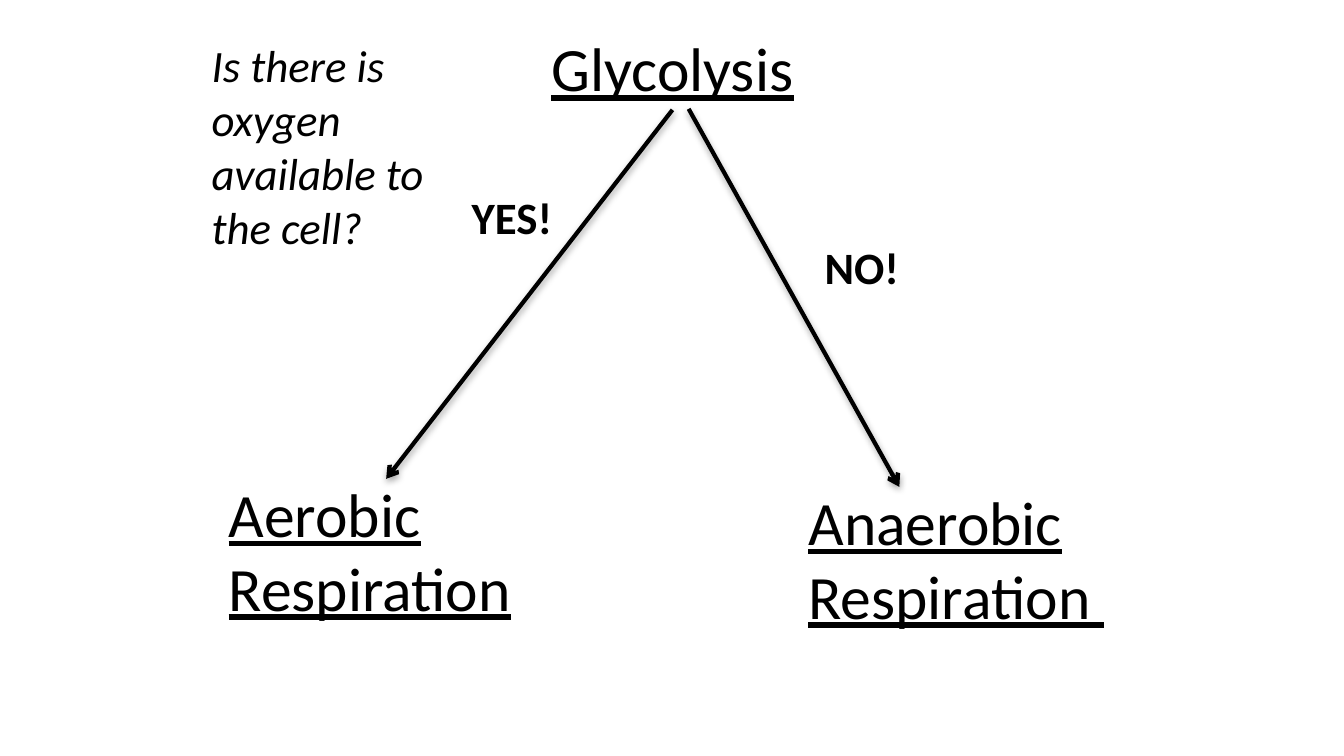
import lxml.etree
import pptx
import pptx.dml.color
import pptx.enum.shapes
import pptx.enum.text
import pptx.oxml.ns
import pptx.util

Inches = pptx.util.Inches
BLACK = "000000"
HEADING = {"size": 44, "underline": True}
QUESTION = {"size": 32, "italic": True}
ANSWER = {"size": 32, "bold": True}


def color(value):
    return pptx.dml.color.RGBColor.from_string(value)


def fill_text(box, text, size, **styles):
    frame = box.text_frame
    frame.word_wrap = True
    frame.auto_size = pptx.enum.text.MSO_AUTO_SIZE.SHAPE_TO_FIT_TEXT
    frame.vertical_anchor = pptx.enum.text.MSO_ANCHOR.TOP
    frame.text = text
    font = frame.paragraphs[0].runs[0].font
    font.name = "Calibri"
    font.size = pptx.util.Pt(size)
    font.color.rgb = color(BLACK)
    for style, value in styles.items():
        setattr(font, style, value)


def add_title(slide, text, left, top, width, height):
    title = slide.shapes.title
    title.left, title.top = Inches(left), Inches(top)
    title.width, title.height = Inches(width), Inches(height)
    fill_text(title, text, **HEADING)
    title.text_frame.paragraphs[0].alignment = pptx.enum.text.PP_ALIGN.CENTER
    return title


def add_label(slide, text, left, top, width, height, style):
    box = slide.shapes.add_textbox(
        Inches(left), Inches(top), Inches(width), Inches(height))
    fill_text(box, text, **style)


def add_arrow(slide, start, end):
    arrow = slide.shapes.add_connector(
        pptx.enum.shapes.MSO_CONNECTOR.STRAIGHT,
        *(Inches(length) for length in start + end))
    arrow.line.color.rgb = color(BLACK)
    arrow.line.width = pptx.util.Pt(3)
    qn = pptx.oxml.ns.qn
    lxml.etree.SubElement(arrow.line._get_or_add_ln(), qn("a:tailEnd"), type="arrow")

    # Soft shadow straight below the line
    effects = lxml.etree.SubElement(arrow._element.spPr, qn("a:effectLst"))
    shadow = lxml.etree.SubElement(
        effects, qn("a:outerShdw"), blurRad=str(pptx.util.Pt(5)),
        dist=str(pptx.util.Pt(1.8)), dir="5400000", rotWithShape="0")
    shade = lxml.etree.SubElement(shadow, qn("a:srgbClr"), val=BLACK)
    lxml.etree.SubElement(shade, qn("a:alpha"), val="35000")
    return arrow


def add_decision_slide(deck):
    slide = deck.slides.add_slide(deck.slide_layouts[5])

    # Starting process and the question
    title = add_title(slide, "Glycolysis", 1.67, 0.25, 10, 0.84)
    add_label(slide, "Is there is oxygen available to the cell?",
              2, 0.33, 2.5, 2.26, QUESTION)

    # Branch with oxygen
    add_label(slide, "YES!", 4.58, 1.83, 1.08, 0.64, ANSWER)
    add_label(slide, "Aerobic Respiration", 2.17, 4.67, 3.25, 1.58, HEADING)
    aerobic_arrow = add_arrow(slide, (6.67, 1.09), (3.83, 4.75))
    aerobic_arrow.begin_connect(title, 2)

    # Branch without oxygen
    add_label(slide, "Anaerobic Respiration ", 7.92, 4.75, 3.17, 1.58, HEADING)
    add_label(slide, "NO!", 8.08, 2.33, 1.58, 0.64, ANSWER)
    add_arrow(slide, (6.83, 1.08), (8.92, 4.83))


def main():
    deck = pptx.Presentation()
    deck.slide_width, deck.slide_height = Inches(13.33), Inches(7.5)
    add_decision_slide(deck)
    deck.save("out.pptx")


if __name__ == "__main__":
    main()
